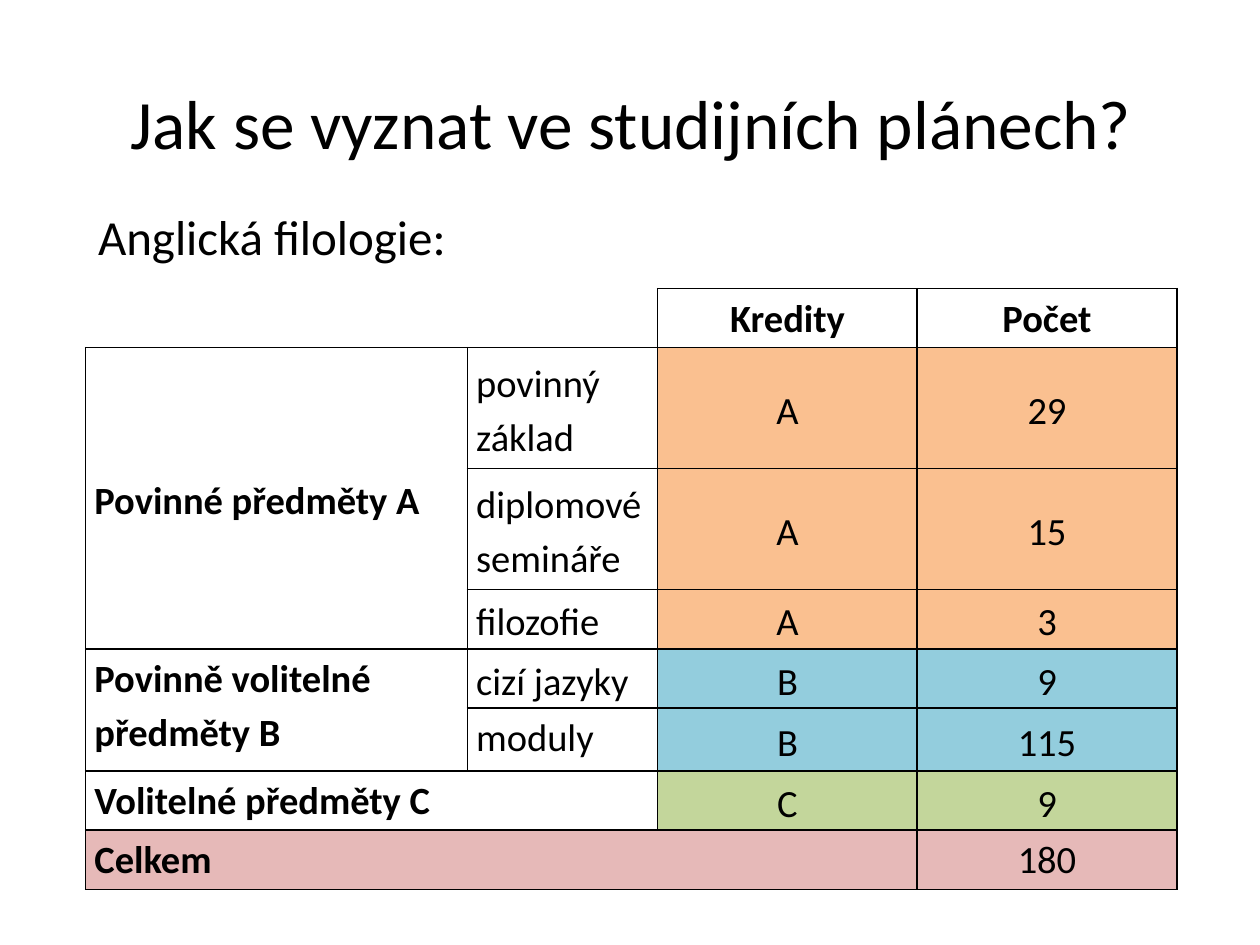
from lxml import etree
from pptx import Presentation
from pptx.dml.color import RGBColor
from pptx.enum import text
from pptx.oxml import ns
from pptx.util import Inches, Pt

BLACK = RGBColor(0x00, 0x00, 0x00)
ORANGE = RGBColor(0xFA, 0xC0, 0x90)
BLUE = RGBColor(0x93, 0xCD, 0xDD)
GREEN = RGBColor(0xC3, 0xD6, 0x9B)
PINK = RGBColor(0xE6, 0xB9, 0xB8)

TOP, MIDDLE = text.MSO_ANCHOR.TOP, text.MSO_ANCHOR.MIDDLE
LEFT, CENTER = text.PP_ALIGN.LEFT, text.PP_ALIGN.CENTER

COLUMN_WIDTHS = [3.03, 1.51, 2.06, 2.06]
ROW_HEIGHTS = [0.47, 0.96, 0.96, 0.47, 0.47, 0.5, 0.47, 0.47]
ROWS = [
    ["", "", "Kredity", "Počet"],
    ["Povinné předměty A", "povinný základ", "A", "29"],
    ["", "diplomové semináře", "A", "15"],
    ["", "filozofie", "A", "3"],
    ["Povinně volitelné předměty B", "cizí jazyky", "B", "9"],
    ["", "moduly", "B", "115"],
    ["Volitelné předměty C", "", "C", "9"],
    ["Celkem", "", "", "180"],
]
ROW_FILLS = [None, ORANGE, ORANGE, ORANGE, BLUE, BLUE, GREEN, PINK]
MERGES = [((1, 0), (3, 0)), ((4, 0), (5, 0)), ((6, 0), (6, 1)), ((7, 0), (7, 2))]
TOP_ANCHORED = {(4, 0), (5, 1), (6, 0), (7, 0), (7, 3)}
HEADER_BLANK_SIDES = {(0, 0): {"B"}, (0, 1): {"R", "B"}}


def set_attributes(target, values):
    """Set each named value on the target."""
    for name, value in values.items():
        setattr(target, name, value)


def write_text(paragraph, words, size, bold=False, **paragraph_format):
    """Write one formatted run in a paragraph."""
    set_attributes(paragraph, paragraph_format)
    run = paragraph.add_run()
    run.text = words
    set_attributes(run.font, {"name": "Calibri", "size": Pt(size), "bold": bold})
    run.font.color.rgb = BLACK


def add_label(slide, box, words, size, **frame_format):
    """Add a single-paragraph text box and return its paragraph."""
    frame = slide.shapes.add_textbox(*map(Inches, box)).text_frame
    set_attributes(frame, frame_format)
    write_text(frame.paragraphs[0], words, size)
    return frame.paragraphs[0]


def add_title(slide, box):
    """Add the centred slide title."""
    paragraph = add_label(slide, box, "Jak se vyznat ve studijních plánech?", 39.6,
                          word_wrap=True, vertical_anchor=MIDDLE)
    paragraph.alignment = CENTER


def add_subtitle(slide, box):
    """Add the name of the study field."""
    add_label(slide, box, "Anglická filologie:", 28, word_wrap=False,
              auto_size=text.MSO_AUTO_SIZE.SHAPE_TO_FIT_TEXT)


def set_borders(cell, visible_sides):
    """Draw the visible sides in black and hide the others."""
    properties = cell._tc.get_or_add_tcPr()
    for index, side in enumerate("LRTB"):
        line = etree.Element(ns.qn(f"a:ln{side}"), w=str(Pt(1)))
        if side in visible_sides:
            fill = etree.SubElement(line, ns.qn("a:solidFill"))
            etree.SubElement(fill, ns.qn("a:srgbClr"), val=str(BLACK))
        else:
            etree.SubElement(line, ns.qn("a:noFill"))
        properties.insert(index, line)


def format_cell(cell, position, words):
    """Fill, border and write one cell according to its position."""
    row, column = position
    anchor = TOP if row == 0 or position in TOP_ANCHORED else MIDDLE
    set_attributes(cell, {"margin_left": Inches(0.07), "margin_right": Inches(0.07),
                          "margin_top": 0, "margin_bottom": 0,
                          "vertical_anchor": anchor})
    color = ROW_FILLS[row]
    if color is not None and (column >= 2 or color == PINK):
        cell.fill.solid()
        cell.fill.fore_color.rgb = color
    else:
        cell.fill.background()
    set_borders(cell, HEADER_BLANK_SIDES.get(position, set("LRTB")))
    if words:
        write_text(cell.text_frame.paragraphs[0], words, 22,
                   bold=row == 0 or column == 0, line_spacing=1.15,
                   alignment=CENTER if column >= 2 else LEFT)


def add_credit_table(slide, box):
    """Add the table of credits by type of course."""
    table = slide.shapes.add_table(len(ROWS), len(COLUMN_WIDTHS), *map(Inches, box)).table
    set_attributes(table, {"first_row": False, "horz_banding": False})
    for column, width in zip(table.columns, COLUMN_WIDTHS):
        column.width = Inches(width)
    for row, height in zip(table.rows, ROW_HEIGHTS):
        row.height = Inches(height)
    for start, end in MERGES:
        table.cell(*start).merge(table.cell(*end))
    for row, values in enumerate(ROWS):
        for column, words in enumerate(values):
            format_cell(table.cell(row, column), (row, column), words)


def main():
    """Build and save the slide."""
    presentation = Presentation()
    set_attributes(presentation, {"slide_width": Inches(10), "slide_height": Inches(7.5)})
    slide = presentation.slides.add_slide(presentation.slide_layouts[6])
    add_title(slide, (0.51, 0.34, 9, 1.25))
    add_credit_table(slide, (0.68, 2.29, 8.66, 4.76))
    add_subtitle(slide, (0.68, 1.59, 3.1, 0.57))
    presentation.save("out.pptx")


if __name__ == "__main__":
    main()
